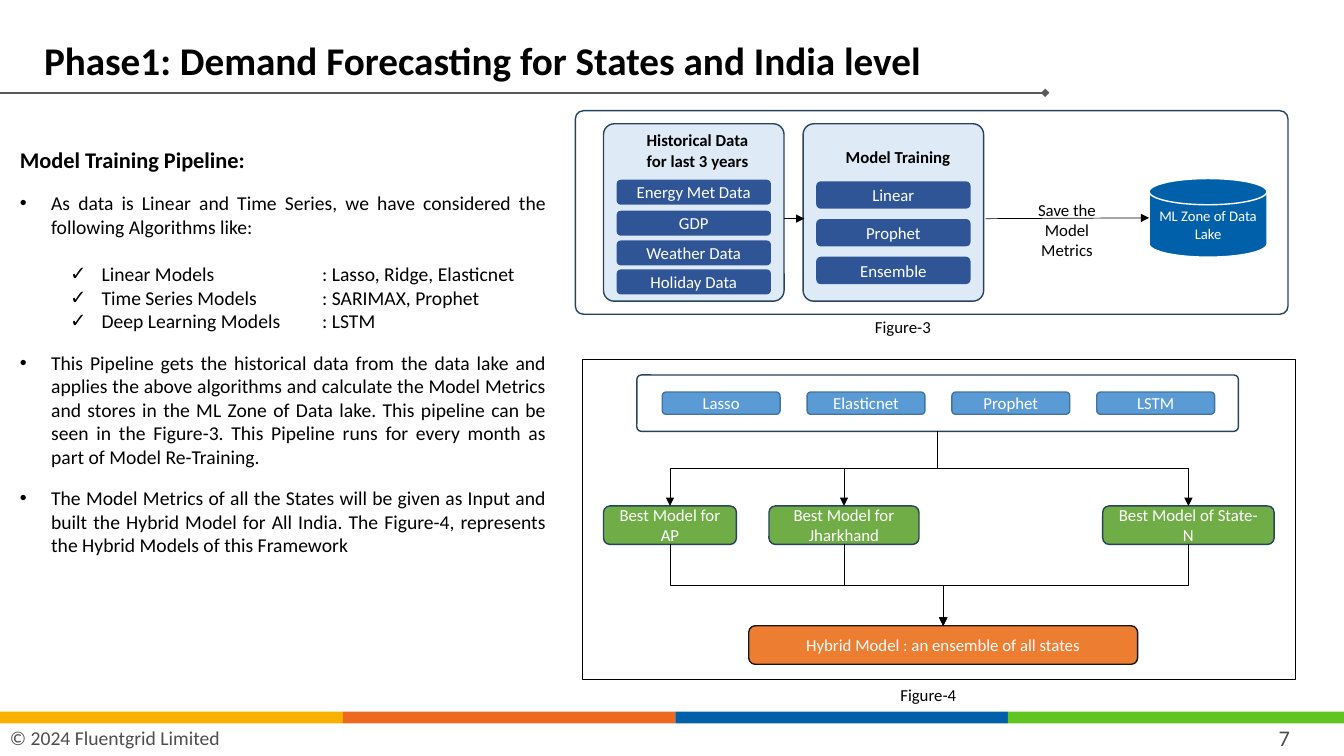
from pptx import Presentation
from pptx import util as u
from pptx.dml.color import RGBColor
from pptx.enum import shapes, text
from pptx.oxml.ns import qn
from lxml import etree

COLORS = {
    "white": "FFFFFF", "black": "000000", "grey": "4D4D4D", "rule": "5A5A5A",
    "yellow": "F9B101", "orange": "EC691F", "blue": "0060AA", "lime": "60C421",
    "outline": "28445D", "panel": "DEEBF7", "navy": "2F5597", "sky": "5B9BD5",
    "sky_line": "43739E", "green": "70AD47", "hybrid": "ED7D31", "dark": "181717",
}
RECT = shapes.MSO_SHAPE.RECTANGLE
ROUND = shapes.MSO_SHAPE.ROUNDED_RECTANGLE
DISK = shapes.MSO_SHAPE.FLOWCHART_MAGNETIC_DISK
LEFT, CENTER, JUSTIFY = text.PP_ALIGN.LEFT, text.PP_ALIGN.CENTER, text.PP_ALIGN.JUSTIFY
TOP, MIDDLE = text.MSO_ANCHOR.TOP, text.MSO_ANCHOR.MIDDLE

prs = Presentation()
prs.slide_width, prs.slide_height = u.Cm(33.87), u.Cm(19.05)
s = prs.slides.add_slide(prs.slide_layouts[6])


def box(kind, x, y, w, h, label="", fill=None, line=None, width=1, adj=None,
        size=12, color="white", bold=False, align=CENTER, anchor=MIDDLE, inset=0.25):
    """Add a shape, or a text box when kind is None."""
    place = [u.Cm(v) for v in (x, y, w, h)]
    if kind is None:
        sp = s.shapes.add_textbox(*place)
    else:
        sp = s.shapes.add_shape(kind, *place)
        sp.shadow.inherit = False
    if adj is not None:
        sp.adjustments[0] = adj
    if fill:
        sp.fill.solid()
        sp.fill.fore_color.rgb = RGBColor.from_string(COLORS[fill])
    else:
        sp.fill.background()
    if line:
        sp.line.color.rgb = RGBColor.from_string(COLORS[line])
        sp.line.width = u.Pt(width)
    else:
        sp.line.fill.background()
    tf = sp.text_frame
    tf.word_wrap = True
    tf.vertical_anchor = anchor
    tf.margin_left = tf.margin_right = u.Cm(inset)
    tf.margin_top = tf.margin_bottom = u.Cm(0.13 if kind is None else 0)
    tf.text = label
    for p in tf.paragraphs:
        p.alignment = align
        for r in p.runs:
            r.font.name, r.font.size, r.font.bold = "Calibri", u.Pt(size), bold
            r.font.color.rgb = RGBColor.from_string(COLORS[color])
    return sp


def connect(kind, x1=0, y1=0, x2=0, y2=0, color="black", width=0.5, head="triangle"):
    c = s.shapes.add_connector(kind, *[u.Cm(v) for v in (x1, y1, x2, y2)])
    c.line.color.rgb = RGBColor.from_string(COLORS[color])
    c.line.width = u.Pt(width)
    etree.SubElement(c.line._get_or_add_ln(), qn("a:tailEnd"), type=head)
    etree.SubElement(c._element.spPr, qn("a:effectLst"))
    return c


STRAIGHT, ELBOW = shapes.MSO_CONNECTOR.STRAIGHT, shapes.MSO_CONNECTOR.ELBOW

# Footer
box(None, 0, 18.14, 8.64, 0.91, "© 2024 Fluentgrid Limited", size=14, color="grey", align=LEFT)
edges = [0, 8.64, 17.02, 25.4, 33.87]
for x, end, fill in zip(edges, edges[1:], ["yellow", "orange", "blue", "lime"]):
    box(RECT, x, 17.93, end - x, 0.3, fill=fill)
box(None, 30.84, 18.14, 3.05, 0.91, "7", size=16, color="grey")

# Title
title = box(None, 0.86, 0.79, 24.13, 1.57, size=28, color="black", bold=True, align=LEFT,
            label="Phase1: Demand Forecasting for States and India level")
title.text_frame.paragraphs[0].line_spacing = 0.9
connect(STRAIGHT, 0, 2.34, 26.34, 2.34, "rule", 1.5, "diamond")

# Body text: space before (pt), bullet, left indent (cm), wording
body = [
    (0, "", 0, "Model Training Pipeline:"),
    (12.8, "•", 0.79, "As data is Linear and Time Series, we have considered the following "
     "Algorithms like:"),
    (17, "✓", 2.06, "Linear Models \t\t: Lasso, Ridge, Elasticnet"),
    (0, "✓", 2.06, "Time Series Models\t: SARIMAX, Prophet"),
    (0, "✓", 2.06, "Deep Learning Models \t: LSTM"),
    (12.8, "•", 0.79, "This Pipeline gets the historical data from the data lake and applies the "
     "above algorithms and calculate the Model Metrics and stores in the ML Zone of Data lake. "
     "This pipeline can be seen in the Figure-3. This Pipeline runs for every month as part of "
     "Model Re-Training."),
    (12.8, "•", 0.79, "The Model Metrics of all the States will be given as Input and built the "
     "Hybrid Model for All India. The Figure-4, represents the Hybrid Models of this Framework"),
]
sp = box(None, 0.25, 3.56, 13.77, 10.67, "\n".join(row[3] for row in body),
         size=14, color="black", align=JUSTIFY, anchor=TOP)
for p, (space, bullet, indent, _) in zip(sp.text_frame.paragraphs, body):
    p.space_before = u.Pt(space)
    pPr = p._p.get_or_add_pPr()
    pPr.set("defTabSz", str(u.Cm(2.54)))
    if bullet:
        pPr.set("marL", str(u.Cm(indent)))
        pPr.set("indent", str(u.Cm(-0.79)))
        etree.SubElement(pPr, qn("a:buFont"), typeface="Arial")
        etree.SubElement(pPr, qn("a:buChar"), char=bullet)
heading = sp.text_frame.paragraphs[0].runs[0]
heading.font.size, heading.font.bold = u.Pt(16), True

# Figure-4: candidate models, best model per state, hybrid model
box(RECT, 14.68, 9.07, 17.96, 8.05, fill="white", line="black", width=0.75)
candidates = box(ROUND, 16.05, 9.45, 15.16, 1.42, line="outline", adj=0.08)
for i, name in enumerate(["Lasso", "Elasticnet", "Prophet", "LSTM"]):
    box(ROUND, 16.69 + 3.65 * i, 9.88, 2.97, 0.56, name, "sky", "sky_line")
hybrid = box(ROUND, 18.87, 15.77, 9.8, 0.97, "Hybrid Model : an ensemble of all states",
             "hybrid", "dark")
for x, w, name in [(15.21, 3.35, "Best Model for AP"), (19.38, 3.78, "Best Model for Jharkhand"),
                   (27.79, 4.32, "Best Model of State-N")]:
    best = box(ROUND, x, 12.75, w, 0.97, name, "green", "outline")
    for start, end in [(candidates, best), (best, hybrid)]:
        c = connect(ELBOW)
        c.begin_connect(start, 2)
        c.end_connect(end, 0)
        # Turn the elbow so that it leaves and arrives vertically
        x1, y1, x2, y2 = c.begin_x, c.begin_y, c.end_x, c.end_y
        c.width, c.height = y2 - y1, abs(x2 - x1)
        c.left, c.top = (x1 + x2 - c.width) // 2, (y1 + y2 - c.height) // 2
        xfrm = c._element.spPr.find(qn("a:xfrm"))
        xfrm.set("rot", str((270 if x2 > x1 else 90) * 60000))
        xfrm.set("flipH", "1" if x2 > x1 else "0")

# Figure-3: historical data, model training, storage
box(ROUND, 14.5, 2.79, 17.96, 5.13, fill="white", line="outline", adj=0.04)
for x in (15.21, 20.24):
    box(ROUND, x, 3.12, 4.55, 4.47, fill="panel", line="outline", adj=0.06)
box(None, 15.98, 3.15, 3.2, 1.27, "Historical Data\nfor last 3 years",
    color="black", bold=True, anchor=TOP, inset=0)
box(None, 21.03, 3.56, 3.2, 0.76, "Model Training", color="black", bold=True, anchor=TOP, inset=0)
for y, name in zip([4.53, 5.31, 6.06, 6.79],
                   ["Energy Met Data", "GDP", "Weather Data", "Holiday Data"]):
    box(ROUND, 15.54, y, 3.89, 0.63, name, "navy")
for i, name in enumerate(["Linear", "Prophet", "Ensemble"]):
    box(ROUND, 20.57, 4.57 + 0.95 * i, 3.89, 0.69, name, "navy")
disk = box(DISK, 28.96, 4.5, 2.97, 1.98, "ML Zone of Data Lake", "blue", "white",
           size=10.5, inset=0.15)
connect(STRAIGHT, 19.76, 5.51, 20.27, 5.51)
connect(STRAIGHT, 24.84, 5.51, 28.96, 5.49)
box(None, 25.43, 4.9, 2.92, 1.8, "Save the\nModel Metrics", color="black", anchor=TOP, inset=0.6)

# Captions
for x, y, name in [(21.79, 7.85, "Figure-3"), (22.43, 17.12, "Figure-4")]:
    box(None, x, y, 1.93, 0.76, name, color="black", anchor=TOP, inset=0)

prs.save("out.pptx")
